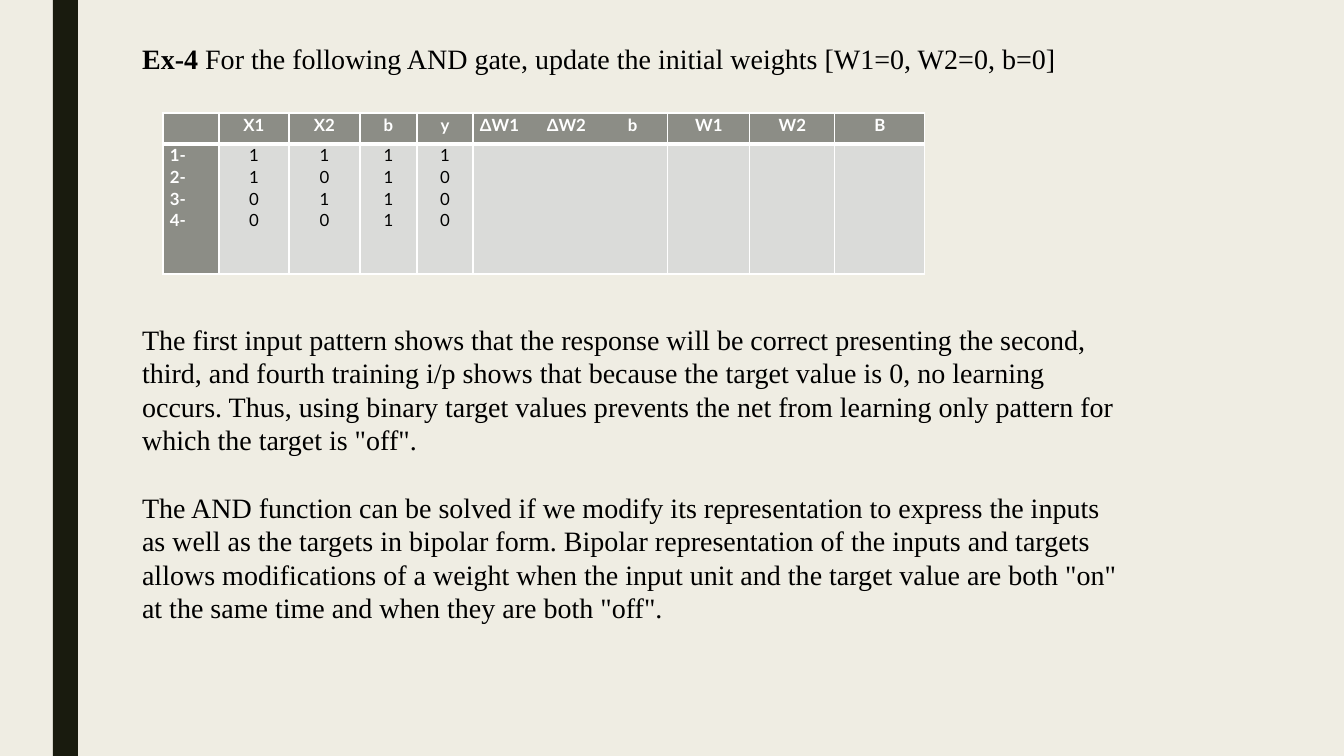
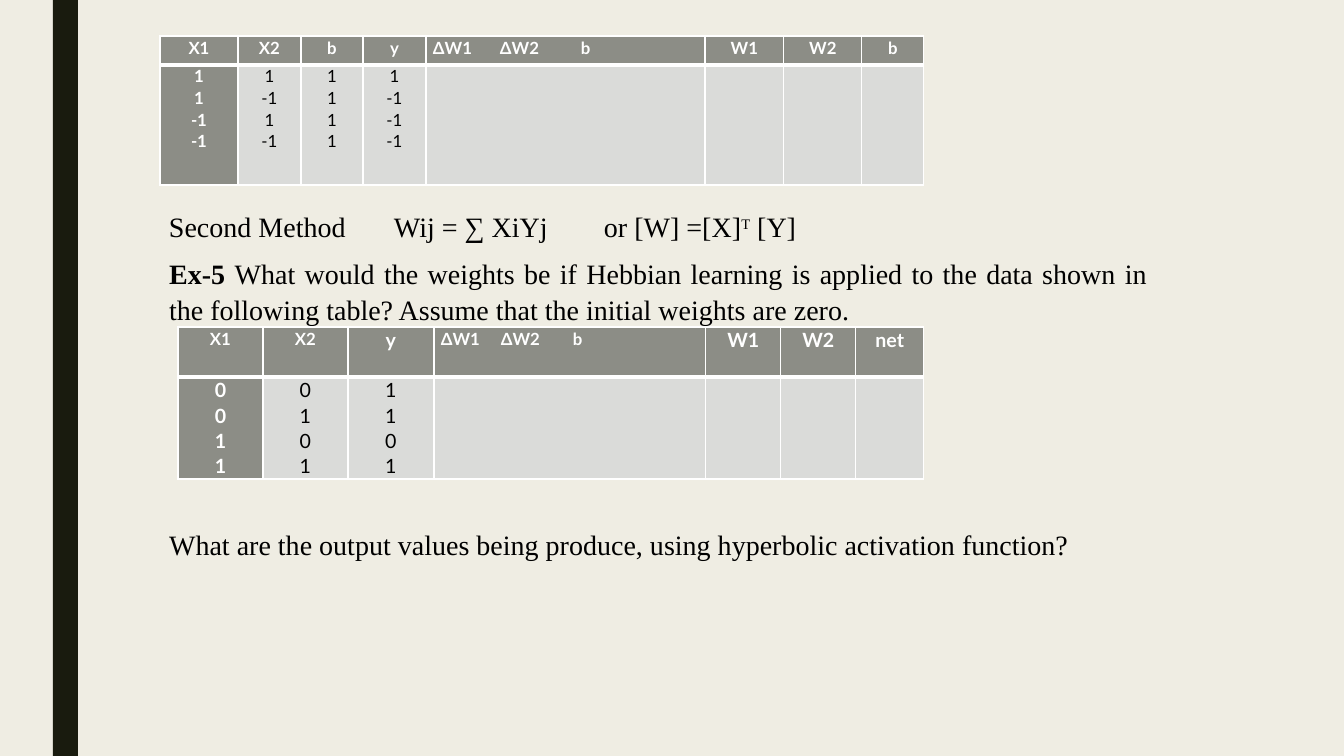
from lxml.etree import SubElement
from pptx import Presentation
from pptx.dml.color import RGBColor
from pptx.enum.shapes import MSO_SHAPE as Shape
from pptx.enum.text import MSO_ANCHOR as Anchor
from pptx.enum.text import MSO_AUTO_SIZE as AutoSize
from pptx.enum.text import PP_ALIGN as Align
from pptx.oxml import parse_xml
from pptx.oxml.ns import nsdecls, qn
from pptx.util import Pt

SLIDE_WIDTH, SLIDE_HEIGHT = 1344, 756
EMU_PER_PX = 12192000 / SLIDE_WIDTH
COLORS = {
    "background": "EFEDE3",
    "band": "191B0E",
    "label": "8C8D86",
    "cell": "DADBD9",
    "white": "FFFFFF",
    "text": "000000",
}
TEXT_FONT, TABLE_FONT = "Times New Roman", "Lato"
TEXT_SIZE = 20
LINE_SPACING = 1.07


def px(length):
    return round(length * EMU_PER_PX)


def color(name):
    return RGBColor.from_string(COLORS[name])


def fill(target, name):
    target.fill.solid()
    target.fill.fore_color.rgb = color(name)


# Text
def add_run(paragraph, text, font=TEXT_FONT, size=TEXT_SIZE, ink="text",
            bold=False, superscript=False):
    run = paragraph.add_run()
    run.text = text
    run.font.name = font
    run.font.size = Pt(size)
    run.font.bold = bold
    run.font.color.rgb = color(ink)
    if superscript:
        run._r.get_or_add_rPr().set("baseline", "30000")


def set_tabs(paragraph, stops):
    tab_list = SubElement(paragraph._p.get_or_add_pPr(), qn("a:tabLst"))
    for stop in stops:
        SubElement(tab_list, qn("a:tab"), pos=str(px(stop)), algn="l")


def format_paragraph(paragraph, align, spacing=LINE_SPACING, before=0):
    paragraph.alignment = align
    paragraph.line_spacing = spacing
    paragraph.space_before = Pt(before)
    paragraph.space_after = Pt(0)


def fill_placeholder(placeholder, box, paragraphs):
    """Each paragraph is (runs, format options); a run is (text, options)."""
    placeholder.left, placeholder.top, placeholder.width, placeholder.height = map(px, box)
    frame = placeholder.text_frame
    frame.word_wrap = True
    frame.auto_size = AutoSize.NONE
    frame.vertical_anchor = Anchor.TOP
    for index, (runs, options) in enumerate(paragraphs):
        paragraph = frame.add_paragraph() if index else frame.paragraphs[0]
        format_paragraph(paragraph, **options)
        properties = paragraph._p.get_or_add_pPr()
        properties.set("marL", "0")
        properties.set("indent", "0")
        SubElement(properties, qn("a:buNone"))
        for text, run_options in runs:
            add_run(paragraph, text, **run_options)


def add_tabbed_line(slide, box, runs, tabs):
    frame = slide.shapes.add_textbox(*map(px, box)).text_frame
    frame.word_wrap = True
    paragraph = frame.paragraphs[0]
    format_paragraph(paragraph, Align.LEFT)
    set_tabs(paragraph, tabs)
    for text, options in runs:
        add_run(paragraph, text, **options)


# Tables
def set_borders(cell, top, bottom):
    properties = cell._tc.get_or_add_tcPr()
    widths = {"lnL": 1, "lnR": 1, "lnT": top, "lnB": bottom}
    for index, (side, width) in enumerate(widths.items()):
        properties.insert(index, parse_xml(
            f'<a:{side} {nsdecls("a")} w="{Pt(width)}"><a:solidFill>'
            f'<a:srgbClr val="{COLORS["white"]}"/></a:solidFill></a:{side}>'))


def fill_cell(cell, lines, size, is_header, is_label, align, tabs):
    fill(cell, "label" if is_label else "cell")
    set_borders(cell, top=1 if is_header else 3, bottom=3 if is_header else 1)
    cell.margin_left = cell.margin_right = px(7)
    cell.margin_top = cell.margin_bottom = 0
    frame = cell.text_frame
    for index, line in enumerate(lines):
        paragraph = frame.add_paragraph() if index else frame.paragraphs[0]
        format_paragraph(paragraph, Align.LEFT if "\t" in line else align)
        if "\t" in line:
            set_tabs(paragraph, tabs)
        add_run(paragraph, line, TABLE_FONT, size,
                "white" if is_label else "text", is_label)
    if not lines:
        SubElement(frame.paragraphs[0]._p, qn("a:endParaRPr"), sz=str(size * 100))


def add_weight_table(slide, position, widths, heights, headers, columns, tabs,
                     header_sizes=None, size=12, label_align=Align.CENTER):
    """Headers over one row of cells; each column lists its values as words."""
    frame = slide.shapes.add_table(
        2, len(widths), *map(px, (*position, sum(widths), sum(heights))))
    table = frame.table
    for row, height in zip(table.rows, heights):
        row.height = px(height)
    for index, width in enumerate(widths):
        table.columns[index].width = px(width)
        header = [headers[index]] if headers[index] else []
        header_size = header_sizes[index] if header_sizes else 12
        fill_cell(table.cell(0, index), header, header_size, True, True,
                  Align.CENTER, tabs)
        values = columns[index].split() if index < len(columns) else []
        align = Align.CENTER if index else label_align
        fill_cell(table.cell(1, index), values, size, False, index == 0, align, tabs)


# Shared look: master background and side band
def add_styled_slide(presentation):
    slide = presentation.slides.add_slide(presentation.slide_layouts[1])
    band = slide.shapes.add_shape(
        Shape.RECTANGLE, px(53), 0, px(25), px(SLIDE_HEIGHT))
    band.shadow.inherit = False
    fill(band, "band")
    band.line.fill.background()
    return slide


# Slides
def build_and_gate(slide):
    fill_placeholder(slide.shapes.title, (132, 34, 1004, 50), [
        ([("Ex-4", {"bold": True}),
          (" For the following AND gate, update the initial weights [W1=0, W2=0, b=0]", {})],
         {"align": Align.LEFT}),
    ])
    prose = {"align": Align.LEFT, "spacing": 1.0}
    fill_placeholder(slide.placeholders[1], (132, 317, 1004, 330), [
        ([("The first input pattern shows that the response will be correct presenting "
           "the second, third, and fourth training i/p shows that because the target "
           "value is 0, no learning occurs. Thus, using binary target values prevents "
           "the net from learning only pattern for which the target is \"off\".", {})],
         prose),
        ([("The AND function can be solved if we modify its representation to express "
           "the inputs as well as the targets in bipolar form. Bipolar representation "
           "of the inputs and targets allows modifications of a weight when the input "
           "unit and the target value are both \"on\" at the same time and when they "
           "are both \"off\".", {})],
         {**prose, "before": 24}),
    ])
    add_weight_table(
        slide, (163, 113), [56, 70, 71, 57, 56, 195, 82, 85, 90], [31, 130],
        ["", "X1", "X2", "b", "y", "ΔW1\tΔW2\tb", "W1", "W2", "B"],
        ["1- 2- 3- 4-", "1 1 0 0", "1 0 1 0", "1 1 1 1", "1 0 0 0"],
        tabs=(67, 148), label_align=Align.LEFT)


def build_bipolar(slide):
    title = slide.shapes.title.element
    title.getparent().remove(title)
    add_tabbed_line(slide, (159, 202, 999, 46), [
        ("Second Method\tWij = ∑ XiYj\tor [W] =[X]", {}),
        ("T", {"superscript": True, "size": 18}),
        (" [Y]", {}),
    ], tabs=(225, 435))
    fill_placeholder(slide.placeholders[1], (159, 249, 999, 330), [
        ([("Ex-5 ", {"bold": True}),
          ("What would the weights be if Hebbian learning is applied to the data shown "
           "in the following table? Assume that the initial weights are zero.", {})],
         {"align": Align.JUSTIFY}),
        ([("What are the output values being produce, using hyperbolic activation "
           "function?", {})],
         {"align": Align.JUSTIFY, "before": 142}),
    ])
    add_weight_table(
        slide, (160, 36), [78, 63, 62, 63, 279, 79, 78, 62], [29, 120],
        ["X1", "X2", "b", "y", "ΔW1\tΔW2\tb", "W1", "W2", "b"],
        ["1 1 -1 -1", "1 -1 1 -1", "1 1 1 1", "1 -1 -1 -1"],
        tabs=(67, 148))
    add_weight_table(
        slide, (178, 327), [85, 85, 86, 272, 75, 75, 68], [50, 102],
        ["X1", "X2", "y", "ΔW1\tΔW2\tb", "W1", "W2", "net"],
        ["0 0 1 1", "0 1 0 1", "1 1 0 1"],
        tabs=(60, 132), header_sizes=[12, 12, 14, 12, 14, 14, 14], size=14)


def main():
    presentation = Presentation()
    presentation.slide_width = px(SLIDE_WIDTH)
    presentation.slide_height = px(SLIDE_HEIGHT)
    fill(presentation.slide_master.background, "background")
    for build in (build_and_gate, build_bipolar):
        build(add_styled_slide(presentation))
    presentation.save("out.pptx")


if __name__ == "__main__":
    main()
